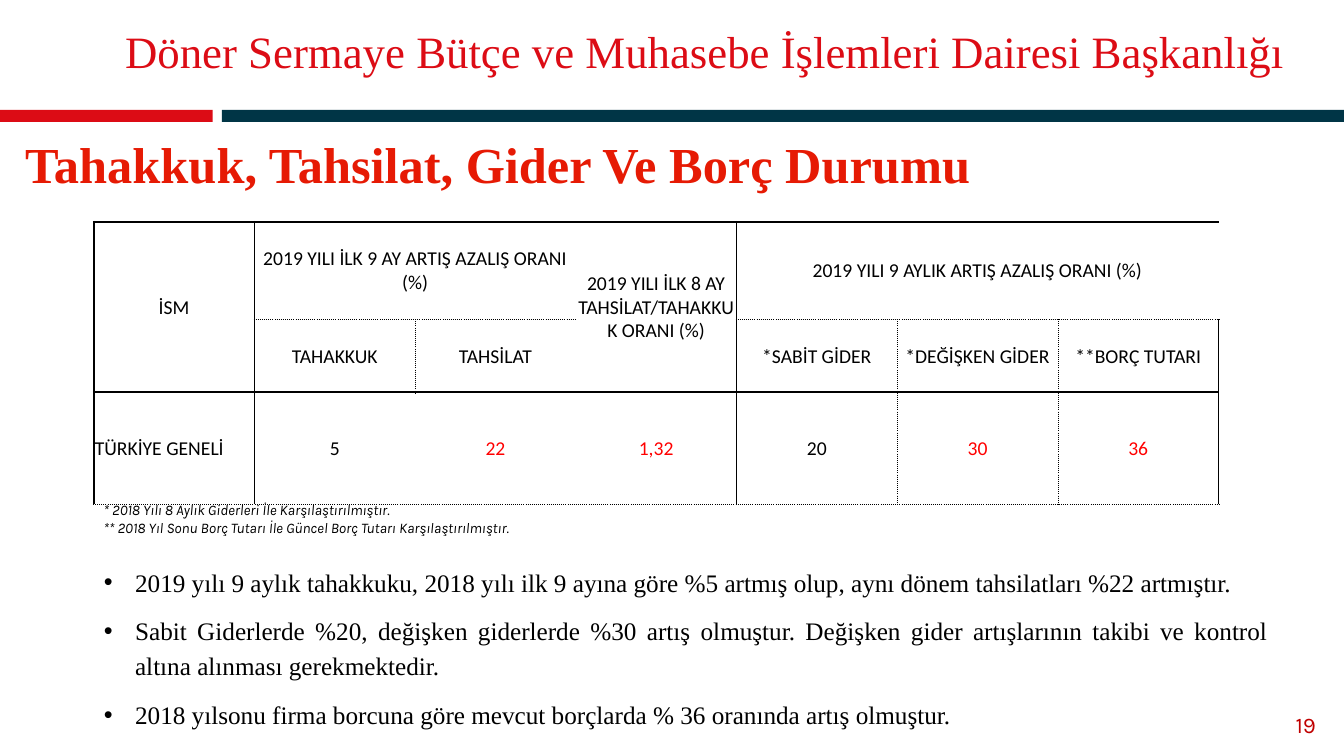
from dataclasses import dataclass

from lxml import etree
from pptx import Presentation, util as u
from pptx.dml.color import RGBColor
from pptx.enum import shapes, text
from pptx.oxml.ns import qn

PX = 9144  # EMU in one px, 100 px to the inch


@dataclass(frozen=True)
class Theme:
    red: str = "DC0C15"
    navy: str = "003546"
    heading: str = "E61A04"
    number: str = "C00000"
    ink: str = "000000"
    alert: str = "FF0000"
    serif: str = "Times New Roman"
    table_font: str = "Calibri"
    note_font: str = "Karla"
    title_size: float = 32
    heading_size: float = 36
    body_size: float = 18
    number_size: float = 16
    table_size: float = 14
    note_size: float = 10.5


THEME = Theme()
ALIGN = text.PP_ALIGN
ANCHOR = text.MSO_ANCHOR

NO_STYLE = "{2D5ABB26-0587-4C30-8999-92F81FD0307C}"
SOLID, DOTTED = (1.5, "solid"), (0.5, "sysDot")
COLUMN_LINES = [SOLID, SOLID, DOTTED, DOTTED, SOLID, DOTTED, DOTTED, SOLID]
ROW_LINES = [SOLID, DOTTED, SOLID, DOTTED]
COLUMN_WIDTH = 159.4
ROW_HEIGHTS = [97, 64, 111]

# (row, column, rows spanned, columns spanned, wording)
HEADERS = [
    (0, 0, 2, 1, "İSM"),
    (0, 1, 1, 2, "2019 YILI İLK 9 AY ARTIŞ AZALIŞ ORANI (%)"),
    (0, 3, 2, 1, "2019 YILI İLK 8 AY TAHSİLAT/TAHAKKUK ORANI (%)"),
    (0, 4, 1, 3, "2019 YILI 9 AYLIK ARTIŞ AZALIŞ ORANI (%)"),
    (1, 1, 1, 1, "TAHAKKUK"),
    (1, 2, 1, 1, "TAHSİLAT"),
    (1, 4, 1, 1, "*SABİT GİDER"),
    (1, 5, 1, 1, "*DEĞİŞKEN GİDER"),
    (1, 6, 1, 1, "**BORÇ TUTARI"),
]
NATIONWIDE = ["TÜRKİYE GENELİ", "5", "22", "1,32", "20", "30", "36"]
ALERT_VALUES = {"22", "1,32", "30", "36"}

NOTES = [
    "* 2018 Yılı 8 Aylık Giderleri İle Karşılaştırılmıştır.",
    "** 2018 Yıl Sonu Borç Tutarı İle Güncel Borç Tutarı Karşılaştırılmıştır.",
]
FINDINGS = [
    "2019 yılı 9 aylık tahakkuku, 2018 yılı ilk 9 ayına göre %5 artmış olup, "
    "aynı dönem tahsilatları %22 artmıştır.",
    "Sabit Giderlerde %20, değişken giderlerde %30 artış olmuştur. Değişken gider "
    "artışlarının takibi ve kontrol altına alınması gerekmektedir.",
    "2018 yılsonu firma borcuna göre mevcut borçlarda % 36 oranında artış olmuştur.",
]


def px(*lengths):
    return [u.Emu(round(length * PX)) for length in lengths]


def write(frame, *lines, font, size, color=THEME.ink, bold=False, italic=False,
          align=ALIGN.LEFT, anchor=ANCHOR.TOP, spacing=1.0, after=0, hang=0, wrap=True):
    """Fill a text frame, one paragraph a line; hang is the bullet indent in px."""
    frame.word_wrap = wrap
    frame.auto_size = text.MSO_AUTO_SIZE.NONE
    frame.vertical_anchor = anchor
    for index, line in enumerate(lines):
        paragraph = frame.add_paragraph() if index else frame.paragraphs[0]
        if hang:
            properties = paragraph._p.get_or_add_pPr()
            properties.set("marL", str(hang * PX))
            properties.set("indent", str(-hang * PX))
        paragraph.alignment = align
        paragraph.line_spacing = spacing
        paragraph.space_before = u.Pt(0)
        paragraph.space_after = u.Pt(after)
        run = paragraph.add_run()
        run.text = line
        run.font.name, run.font.size = font, u.Pt(size)
        run.font.bold, run.font.italic = bold, italic
        run.font.color.rgb = RGBColor.from_string(color)


def add_text(slide, box, *lines, **style):
    write(slide.shapes.add_textbox(*px(*box)).text_frame, *lines, **style)


def fill_placeholder(placeholder, box, *lines, **style):
    placeholder.left, placeholder.top, placeholder.width, placeholder.height = px(*box)
    write(placeholder.text_frame, *lines, **style)


def add_bar(slide, box, color):
    bar = slide.shapes.add_shape(shapes.MSO_SHAPE.RECTANGLE, *px(*box))
    bar.shadow.inherit = False
    bar.fill.solid()
    bar.fill.fore_color.rgb = RGBColor.from_string(color)
    bar.line.fill.background()


def draw_border(cell, side, line):
    properties = cell._tc.get_or_add_tcPr()
    border = etree.SubElement(properties, qn(f"a:ln{side}"))
    if line is None:
        etree.SubElement(border, qn("a:noFill"))
        return
    width, dash = line
    border.set("w", str(u.Pt(width)))
    fill = etree.SubElement(border, qn("a:solidFill"))
    etree.SubElement(fill, qn("a:srgbClr"), val=THEME.ink)
    etree.SubElement(border, qn("a:prstDash"), val=dash)


def fill_region(table, row, column, rows, columns, wording):
    """Merge a block of cells, rule its outer edges and write its wording."""
    last_row, last_column = row + rows - 1, column + columns - 1
    origin = table.cell(row, column)
    if rows * columns > 1:
        origin.merge(table.cell(last_row, last_column))
    for r in range(row, last_row + 1):
        for c in range(column, last_column + 1):
            cell = table.cell(r, c)
            # The values in columns 1 to 3 have no rules between them.
            open_left = c > column or (r == 2 and c in (2, 3))
            open_right = c < last_column or (r == 2 and c in (1, 2))
            draw_border(cell, "L", None if open_left else COLUMN_LINES[c])
            draw_border(cell, "R", None if open_right else COLUMN_LINES[c + 1])
            draw_border(cell, "T", None if r > row else ROW_LINES[r])
            draw_border(cell, "B", None if r < last_row else ROW_LINES[r + 1])
            cell.fill.background()
    origin.margin_left, origin.margin_top, origin.margin_right, origin.margin_bottom = px(1, 1, 1, 0)
    origin.vertical_anchor = ANCHOR.MIDDLE
    paragraph = origin.text_frame.paragraphs[0]
    paragraph.alignment = ALIGN.LEFT if (row, column) == (2, 0) else ALIGN.CENTER
    run = paragraph.add_run()
    run.text = wording
    run.font.name, run.font.size = THEME.table_font, u.Pt(THEME.table_size)
    color = THEME.alert if wording in ALERT_VALUES else THEME.ink
    run.font.color.rgb = RGBColor.from_string(color)


def add_rates_table(slide):
    count = len(NATIONWIDE)
    box = px(93, 220, COLUMN_WIDTH * count, sum(ROW_HEIGHTS))
    table = slide.shapes.add_table(len(ROW_HEIGHTS), count, *box).table
    table.first_row = table.horz_banding = False
    table._tbl.tblPr.find(qn("a:tableStyleId")).text = NO_STYLE
    for column in table.columns:
        column.width = px(COLUMN_WIDTH)[0]
    for row, height in zip(table.rows, ROW_HEIGHTS):
        row.height = px(height)[0]
    values = [(2, column, 1, 1, value) for column, value in enumerate(NATIONWIDE)]
    for region in HEADERS + values:
        fill_region(table, *region)


def main():
    deck = Presentation()
    deck.slide_width, deck.slide_height = px(1333, 750)
    slide = deck.slides.add_slide(deck.slide_layouts[1])
    title, findings = slide.placeholders

    add_bar(slide, (0, 109, 211, 12), THEME.red)
    add_bar(slide, (220, 109, 1113, 12), THEME.navy)
    fill_placeholder(title, (114, 14, 1201, 80),
                     "Döner Sermaye Bütçe ve Muhasebe İşlemleri Dairesi Başkanlığı",
                     font=THEME.serif, size=THEME.title_size, color=THEME.red,
                     anchor=ANCHOR.MIDDLE, spacing=0.9)
    add_text(slide, (15, 134, 1177, 65), "Tahakkuk, Tahsilat, Gider Ve Borç Durumu",
             font=THEME.serif, size=THEME.heading_size, color=THEME.heading,
             bold=True, spacing=0.9)
    add_rates_table(slide)
    add_text(slide, (93, 492, 453, 45), *NOTES, font=THEME.note_font,
             size=THEME.note_size, italic=True, wrap=False)
    fill_placeholder(findings, (93, 553, 1175, 175), *FINDINGS, font=THEME.serif,
                     size=THEME.body_size, align=ALIGN.JUSTIFY, spacing=1.15,
                     after=10, hang=31)
    add_text(slide, (1225, 699, 90, 40), "19", font=THEME.note_font,
             size=THEME.number_size, color=THEME.number, align=ALIGN.RIGHT,
             anchor=ANCHOR.MIDDLE)
    deck.save("out.pptx")


if __name__ == "__main__":
    main()
